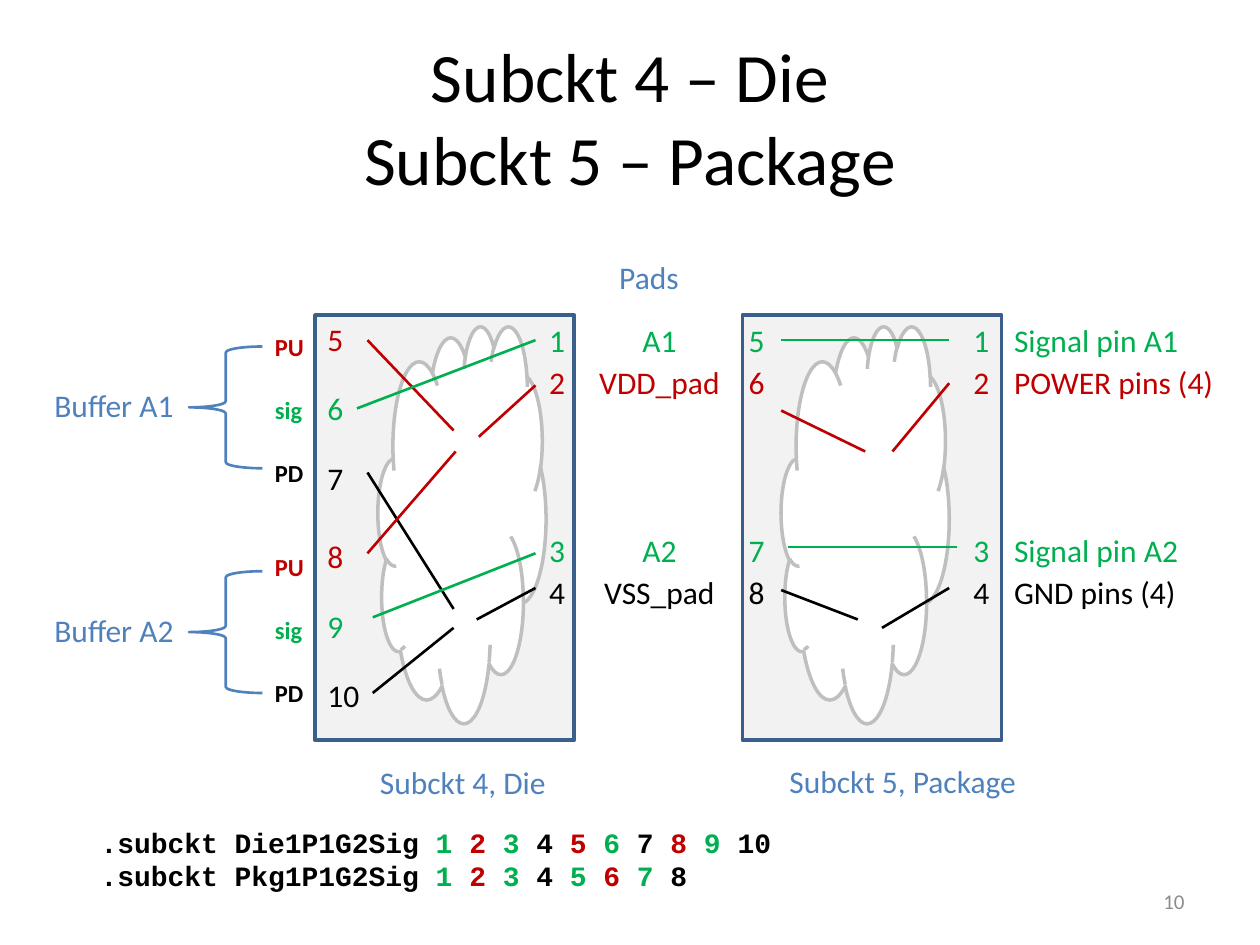
from dataclasses import dataclass
from typing import NamedTuple

from pptx import Presentation
from pptx import util as u
from pptx.dml.color import RGBColor
from pptx.enum import shapes, text
from pptx.oxml.ns import qn
from lxml import etree

CELL = 1 / 12  # the page is a grid of 120 columns by 90 rows
COLUMNS, ROWS = 120, 90


@dataclass(frozen=True)
class Theme:
    signal: str = "00B050"
    power: str = "C00000"
    ground: str = "000000"
    label: str = "4F81BD"
    number: str = "8C8C8C"
    panel: str = "F2F2F2"
    panel_edge: str = "3A5F8C"
    cloud: str = "FFFFFF"
    cloud_edge: str = "BFBFBF"
    body: str = "Calibri"
    code: str = "Courier New"
    title_size: float = 39.6
    body_size: float = 18
    code_size: float = 16
    tag_size: float = 14
    number_size: float = 12


THEME = Theme()
G, R, K, B = THEME.signal, THEME.power, THEME.ground, THEME.label
LEFT, CENTER, RIGHT = text.PP_ALIGN.LEFT, text.PP_ALIGN.CENTER, text.PP_ALIGN.RIGHT


class Span(NamedTuple):
    words: str
    colour: str


class Area(NamedTuple):
    left: float
    top: float
    width: float
    height: float


class Wire(NamedTuple):
    colour: str
    x1: float
    y1: float
    x2: float
    y2: float


def grid(*cells: float) -> list[int]:
    return [u.Inches(cell * CELL) for cell in cells]


def apply(target, values: dict) -> None:
    for name, value in values.items():
        setattr(target, name, value)


def write(page, area: Area, lines: list[list[Span]], size: float = THEME.body_size,
          font: str = THEME.body, bold: bool = False, wrap: bool = False,
          anchor=text.MSO_ANCHOR.TOP, **layout):
    box = page.shapes.add_textbox(*grid(*area))
    frame = box.text_frame
    apply(frame, {"word_wrap": wrap, "vertical_anchor": anchor})
    for index, line in enumerate(lines):
        para = frame.add_paragraph() if index else frame.paragraphs[0]
        apply(para, layout)
        for words, colour in line:
            for part, piece in enumerate(words.split("\n")):
                if part:
                    para.add_line_break()
                span = para.add_run()
                span.text = piece
                apply(span.font, {"name": font, "size": u.Pt(size), "bold": bold})
                span.font.color.rgb = RGBColor.from_string(colour)
    return box


def draw_shape(page, kind, area: Area, edge: str, weight: float, fill: str = "") -> None:
    shape = page.shapes.add_shape(kind, *grid(*area))
    shape.shadow.inherit = False
    if fill:
        shape.fill.solid()
        shape.fill.fore_color.rgb = RGBColor.from_string(fill)
    else:
        shape.fill.background()
    shape.line.color.rgb = RGBColor.from_string(edge)
    shape.line.width = u.Pt(weight)


def draw_wire(page, wire: Wire) -> None:
    line = page.shapes.add_connector(shapes.MSO_CONNECTOR.STRAIGHT, *grid(*wire[1:]))
    line.line.color.rgb = RGBColor.from_string(wire.colour)
    line.line.width = u.Pt(1.5)
    etree.SubElement(line._element.spPr, qn("a:effectLst"))


def draw_pads(page, left: float, width: float, names: str, align) -> None:
    """Two pads at the top, then two more below a gap of three rows."""
    lines = [[Span(name, colour)] for name, colour in zip(names.split(), (G, R, G, K))]
    box = write(page, Area(left, 30, width, 40.5), lines, wrap=True,
                alignment=align, space_after=u.Pt(2.4))
    box.text_frame.paragraphs[2].space_before = u.Pt(3 * 24)


def draw_buffer(page, name: str, brace_top: float, tag_top: float,
                pin_top: float, pin_width: float, pins: str) -> None:
    draw_shape(page, shapes.MSO_SHAPE.LEFT_BRACE, Area(18, brace_top, 7, 11.6), B, 1.5)
    write(page, Area(4, brace_top + 3.2, 13.9, 4.8), [[Span(name, B)]])
    for row, (tag, colour) in enumerate((("PU", R), ("sig", G), ("PD", K))):
        write(page, Area(25, tag_top + 6 * row, 5.2, 4.1), [[Span(tag, colour)]],
              size=THEME.tag_size, bold=True)
    lines = [[Span(pin, colour)] for pin, colour in zip(pins.split(), (R, G, K))]
    write(page, Area(30, pin_top, pin_width, 18.1), lines, space_after=u.Pt(18))


def netlist(name: str, colours: tuple) -> list[Span]:
    pins = [Span(f" {pin}", colour) for pin, colour in enumerate(colours, 1)]
    return [Span(f".subckt {name}", K), *pins]


WIRES = [
    # Die, buffer side
    Wire(R, 35, 32.4, 43.2, 41), Wire(K, 35.5, 66, 43.2, 59.8),
    Wire(K, 35, 45, 43.2, 58), Wire(R, 35, 52.7, 43.4, 43),
    Wire(G, 34, 38.9, 51, 32.4), Wire(G, 35.5, 58.8, 51, 52.7),
    # Die, pad side
    Wire(R, 45.6, 41.6, 51, 36.7), Wire(K, 45.4, 59, 51, 56),
    # Package
    Wire(R, 85, 43, 90.4, 36.5), Wire(K, 84, 59.8, 90.4, 56),
    Wire(R, 82.4, 43, 74.4, 39.1), Wire(G, 74.4, 32.4, 90.4, 32.4),
    Wire(G, 75, 52.1, 91.1, 52.1), Wire(K, 74.4, 56.2, 81.7, 59),
]


def main() -> None:
    deck = Presentation()
    deck.slide_width, deck.slide_height = grid(COLUMNS, ROWS)
    page = deck.slides.add_slide(deck.slide_layouts[6])

    # Title
    write(page, Area(6, 3.6, 108, 15), [[Span("Subckt 4 – Die\nSubckt 5 – Package", K)]],
          size=THEME.title_size, wrap=True, anchor=text.MSO_ANCHOR.MIDDLE, alignment=CENTER)

    # Package and die panels with their clouds
    for panel_left, cloud_left in ((70.7, 74.4), (30, 36)):
        draw_shape(page, shapes.MSO_SHAPE.RECTANGLE, Area(panel_left, 30, 24.7, 40.5),
                   THEME.panel_edge, 2, THEME.panel)
        draw_shape(page, shapes.MSO_SHAPE.CLOUD, Area(cloud_left, 31, 16, 37.8),
                   THEME.cloud_edge, 2, THEME.cloud)

    # Wires
    for wire in WIRES:
        draw_wire(page, wire)

    # Buffers
    draw_buffer(page, "Buffer A1", 33, 31, 29.9, 4, "5 6 7")
    draw_buffer(page, "Buffer A2", 54.4, 52, 50.6, 5.5, "8 9 10")

    # Pad columns
    draw_pads(page, 49, 6, "1 2 3 4", RIGHT)
    draw_pads(page, 55, 15.6, "A1 VDD_pad A2 VSS_pad", CENTER)
    draw_pads(page, 68, 6, "5 6 7 8", RIGHT)
    draw_pads(page, 89.4, 6, "1 2 3 4", RIGHT)

    # Pin names and captions
    for words, colour, left, top, width in (
        ("Signal pin A1", G, 95.4, 30, 18.2),
        ("POWER pins (4)", R, 95.4, 34, 21.6),
        ("Signal pin A2", G, 95.4, 50, 18.2),
        ("GND pins (4)", K, 95.4, 54, 18),
        ("Pads", B, 57.8, 24, 8.2),
        ("Subckt 4, Die", B, 35, 72.1, 18.4),
        ("Subckt 5, Package", B, 74, 72, 24.2),
    ):
        write(page, Area(left, top, width, 4.8), [[Span(words, colour)]])

    # Netlist and page number
    write(page, Area(8.4, 78, 67.2, 7.7),
          [netlist("Die1P1G2Sig", (G, R, G, K, R, G, K, R, G, K)),
           netlist("Pkg1P1G2Sig", (G, R, G, K, G, R, G, K))],
          size=THEME.code_size, font=THEME.code, bold=True)
    write(page, Area(86, 83.4, 28, 4.8), [[Span("10", THEME.number)]],
          size=THEME.number_size, wrap=True, anchor=text.MSO_ANCHOR.MIDDLE, alignment=RIGHT)

    deck.save("out.pptx")


if __name__ == "__main__":
    main()
